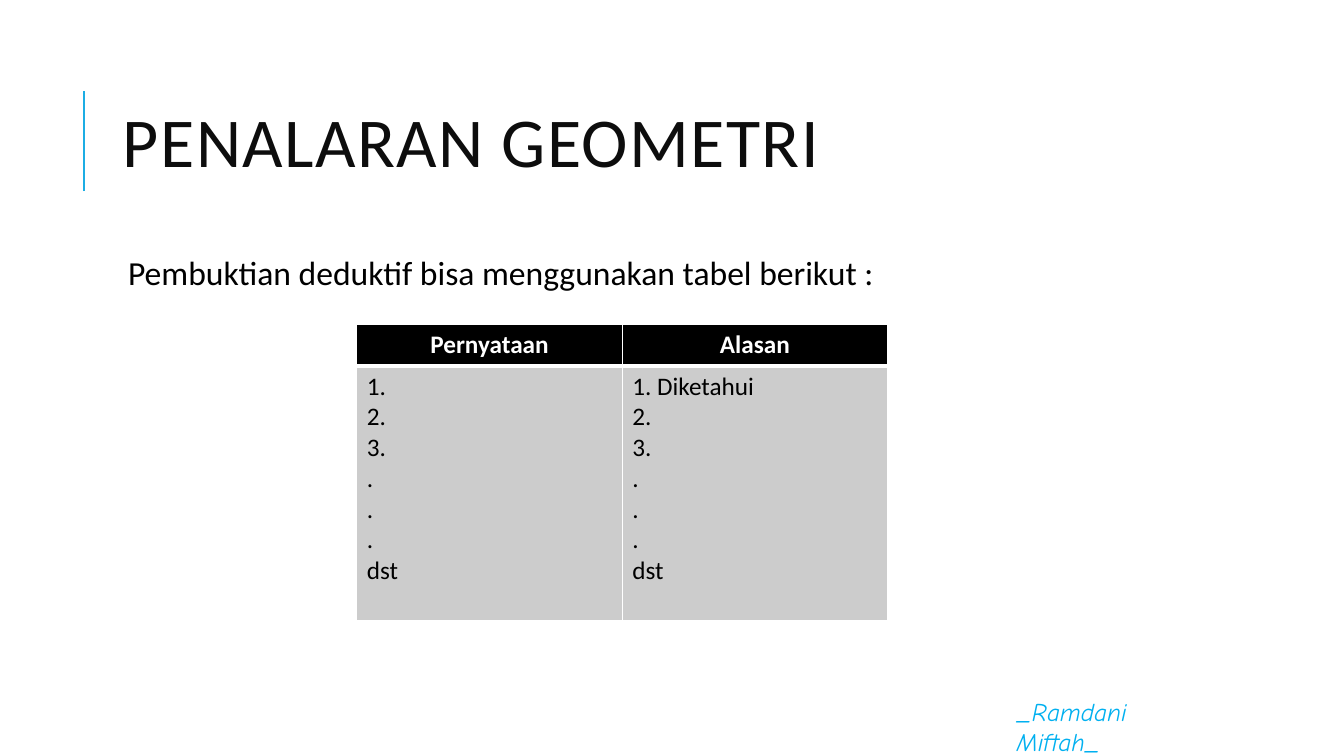
from lxml.etree import SubElement
from pptx import Presentation
from pptx.dml.color import RGBColor
from pptx.enum.shapes import MSO_CONNECTOR
from pptx.enum.text import MSO_ANCHOR, MSO_AUTO_SIZE, PP_ALIGN
from pptx.oxml.ns import qn
from pptx.util import Inches, Pt

WIDE, HIGH = Inches(13.333), Inches(7.5)
STEPS = ["2.", "3.", ".", ".", ".", "dst"]
COLS = [("Pernyataan", ["1."] + STEPS), ("Alasan", ["1. Diketahui"] + STEPS)]


def paint(code):
    """Turn a hex string into a colour."""
    return RGBColor.from_string(code)


def place(left, top, width, height):
    """Turn shares of the slide into lengths."""
    return (round(WIDE * left), round(HIGH * top),
            round(WIDE * width), round(HIGH * height))


def write(para, text, size, tint, face="Calibri", bold=False, slant=False):
    """Add one styled run to a paragraph."""
    run = para.add_run()
    run.text = text
    font = run.font
    font.name, font.size = face, Pt(size)
    font.bold, font.italic = bold, slant
    font.color.rgb = paint(tint)
    return run


def add_title(slide, text):
    """Move, format and fill the title."""
    title = slide.shapes.title
    title.left, title.top, title.width, title.height = place(0.084, 0.085, 0.797, 0.219)
    frame = title.text_frame
    frame.auto_size = MSO_AUTO_SIZE.NONE
    frame.vertical_anchor = MSO_ANCHOR.MIDDLE
    para = frame.paragraphs[0]
    para.alignment, para.line_spacing = PP_ALIGN.LEFT, 0.8
    run = write(para, text, 50, "0D0D0D")
    run.font._element.set("spc", "100")


def add_text(slide, spot, text, size, tint, **style):
    """Add a text box that wraps, with its run, and return its frame."""
    frame = slide.shapes.add_textbox(*spot).text_frame
    frame.word_wrap = True
    write(frame.paragraphs[0], text, size, tint, **style)
    return frame


def add_rule(slide, left, top, height):
    """Draw the upright accent line beside the title."""
    x, low, _, tall = place(left, top, 0, height)
    rule = slide.shapes.add_connector(MSO_CONNECTOR.STRAIGHT, x, low + tall, x, low)
    rule.line.color.rgb = paint("1CADE4")
    rule.line.width = Pt(1.5)
    SubElement(rule._element.spPr, qn("a:effectLst"))


def edge(cell, **sides):
    """Give a cell white borders of the given widths."""
    props = cell._tc.get_or_add_tcPr()
    for spot, (side, width) in enumerate(sides.items()):
        line = SubElement(props, qn(f"a:ln{side}"), w=str(Pt(width)))
        fill = SubElement(line, qn("a:solidFill"))
        SubElement(fill, qn("a:srgbClr"), val="FFFFFF")
        props.insert(spot, line)


def fill_cell(cell, lines, back, tint, head):
    """Fill one table cell with a paragraph for each line."""
    cell.fill.solid()
    cell.fill.fore_color.rgb = paint(back)
    frame = cell.text_frame
    for spot, text in enumerate(lines):
        para = frame.add_paragraph() if spot else frame.paragraphs[0]
        para.alignment = PP_ALIGN.CENTER if head else PP_ALIGN.LEFT
        write(para, text, 18, tint, bold=head)
    edge(cell, L=1, R=1, T=1 if head else 3, B=3 if head else 1)


def add_proof(slide, spot):
    """Add the table of statements and reasons."""
    table = slide.shapes.add_table(2, len(COLS), *spot).table
    table.rows[0].height = Inches(0.41)
    table.rows[1].height = spot[3] - Inches(0.41)
    for col, (name, steps) in enumerate(COLS):
        fill_cell(table.cell(0, col), [name], "000000", "FFFFFF", True)
        fill_cell(table.cell(1, col), steps, "CCCCCC", "000000", False)


def main():
    """Build and save the slide."""
    deck = Presentation()
    deck.slide_width, deck.slide_height = WIDE, HIGH
    slide = deck.slides.add_slide(deck.slide_layouts[5])
    add_rule(slide, 0.0625, 0.12, 0.133)
    mark = add_text(slide, place(0.749, 0.937, 0.143, 0.047), "_Ramdani Miftah_",
                    18, "00B0F0", face="Comic Neue", slant=True)
    mark.vertical_anchor = MSO_ANCHOR.MIDDLE
    add_title(slide, "PENALARAN GEOMETRI")
    body = add_text(slide, place(0.084, 0.333, 0.797, 0.587),
                    "Pembuktian deduktif bisa menggunakan tabel berikut :", 24, "000000")
    body.margin_left = Inches(0.15)
    body.margin_top = body.margin_right = body.margin_bottom = Inches(0.05)
    para = body.paragraphs[0]
    para.line_spacing, para.space_before, para.space_after = 0.9, Pt(12), Pt(2)
    add_proof(slide, place(0.2655, 0.4295, 0.395, 0.392))
    deck.save("out.pptx")


if __name__ == "__main__":
    main()
